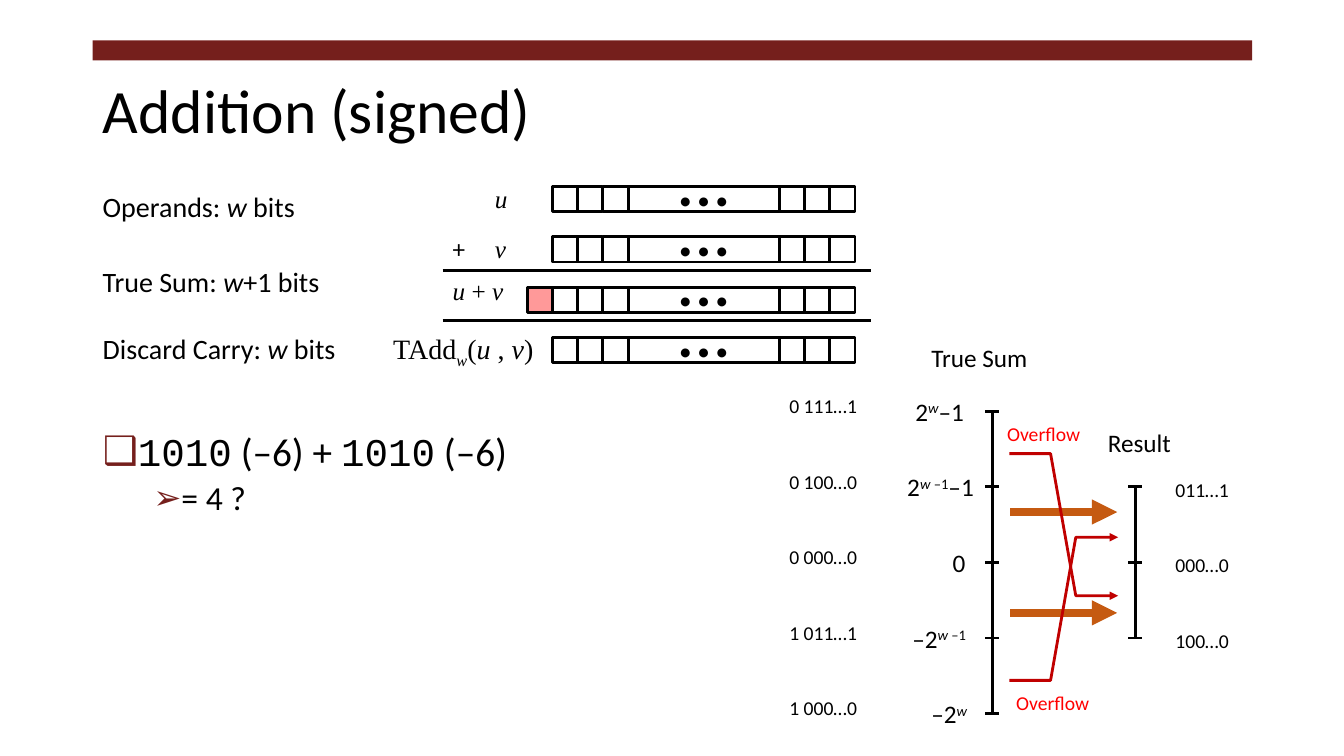
from lxml import etree
from pptx import Presentation
from pptx.dml.color import RGBColor
from pptx.enum.shapes import MSO_CONNECTOR, MSO_SHAPE
from pptx.enum.text import MSO_ANCHOR, MSO_AUTO_SIZE, PP_ALIGN
from pptx.oxml.ns import qn
from pptx.util import Inches, Pt

RECTANGLE = MSO_SHAPE.RECTANGLE
STRAIGHT = MSO_CONNECTOR.STRAIGHT
MIDDLE = MSO_ANCHOR.MIDDLE
NO_FIT, GROW = MSO_AUTO_SIZE.NONE, MSO_AUTO_SIZE.SHAPE_TO_FIT_TEXT
LEFT, CENTER, RIGHT = PP_ALIGN.LEFT, PP_ALIGN.CENTER, PP_ALIGN.RIGHT

SANS, SERIF, MONO = "Calibri", "Times New Roman", "Courier New"
BLACK, WHITE, MAROON, PINK = "000000", "FFFFFF", "751F1C", "FF9999"
RED, CRIMSON, ORANGE = "FF0000", "C00000", "C55A11"
BIT = 0.25
STEP = 0.75
TOP_TICK = 4.08
BASELINES = {"^": "30000", "_": "-25000"}


def rgb(color):
    return RGBColor.from_string(color)


def place(shape, left, top, width, height):
    shape.left, shape.top = Inches(left), Inches(top)
    shape.width, shape.height = Inches(width), Inches(height)


def add_runs(paragraph, parts, size, font=SANS, color=BLACK):
    """Write (text, style) parts; style letters: i italic, m mono, ^ raised, _ lowered."""
    for text, style in parts:
        run = paragraph.add_run()
        run.text = text
        run.font.name = MONO if "m" in style else font
        run.font.size = Pt(size)
        run.font.italic = "i" in style
        run.font.color.rgb = rgb(color)
        for mark, baseline in BASELINES.items():
            if mark in style:
                run.font._element.set("baseline", baseline)


def add_label(shapes, box, parts, size=18, font=SANS, color=BLACK, align=LEFT, wrap=False):
    label = shapes.add_textbox(*map(Inches, box))
    frame = label.text_frame
    frame.word_wrap = wrap
    frame.auto_size = GROW
    paragraph = frame.paragraphs[0]
    paragraph.alignment = align
    if isinstance(parts, str):
        parts = [(parts, "")]
    add_runs(paragraph, parts, size, font, color)


def add_box(shapes, left, top, width, height, fill=WHITE, outlined=True):
    box = shapes.add_shape(RECTANGLE, *map(Inches, (left, top, width, height)))
    box.shadow.inherit = False
    box.fill.solid()
    box.fill.fore_color.rgb = rgb(fill)
    if outlined:
        box.line.color.rgb = rgb(BLACK)
        box.line.width = Pt(2)
    else:
        box.line.fill.background()
    return box


def style_line(line_shape, color, width, arrow):
    line_shape.line.color.rgb = rgb(color)
    line_shape.line.width = Pt(width)
    properties = line_shape._element.spPr
    if arrow:
        etree.SubElement(properties.find(qn("a:ln")), qn("a:tailEnd"), type="triangle")


def add_line(shapes, x1, y1, x2, y2, color=BLACK, width=2, arrow=False):
    line = shapes.add_connector(STRAIGHT, *map(Inches, (x1, y1, x2, y2)))
    style_line(line, color, width, arrow)
    etree.SubElement(line._element.spPr, qn("a:effectLst"))


def add_overflow_path(shapes, start_y, end_y):
    points = [(10.01, start_y), (10.42, start_y), (10.67, end_y), (11.09, end_y)]
    corners = [(Inches(x), Inches(y)) for x, y in points]
    builder = shapes.build_freeform(*corners[0])
    builder.add_line_segments(corners[1:], close=False)
    route = builder.convert_to_shape()
    route.shadow.inherit = False
    route.fill.background()
    style_line(route, CRIMSON, 2, arrow=True)


def add_bit_row(slide, top, carry=False):
    row = slide.shapes.add_group_shape().shapes
    for left in (5.48, 7.73):
        for index in range(3):
            add_box(row, left + index * BIT, top, BIT, BIT)
    middle = add_box(row, 6.23, top, 1.5, BIT)
    frame = middle.text_frame
    frame.word_wrap = False
    frame.vertical_anchor = MIDDLE
    frame.paragraphs[0].alignment = CENTER
    add_runs(frame.paragraphs[0], [("• • •", "")], 18)
    if carry:
        add_box(row, 5.23, top, BIT, BIT, PINK)


def add_axis(shapes, x, top, ticks):
    """Draw a vertical scale in two halves, with evenly spaced ticks."""
    half = STEP * (ticks - 1) / 2
    for start in (top, top + half):
        add_line(shapes, x, start, x, start + half)
    for index in range(ticks):
        y = top + index * STEP
        add_line(shapes, x - 0.07, y, x + 0.07, y)


def add_bullet(paragraph, symbol, margin, parts, size, space_before):
    properties = paragraph._p.get_or_add_pPr()
    properties.set("marL", str(Inches(margin)))
    properties.set("indent", str(Inches(-0.25)))
    bullet_color = etree.SubElement(properties, qn("a:buClr"))
    etree.SubElement(bullet_color, qn("a:srgbClr"), val=MAROON)
    etree.SubElement(properties, qn("a:buChar"), char=symbol)
    paragraph.line_spacing = 0.9
    paragraph.space_before = Pt(space_before)
    add_runs(paragraph, parts, size)


def fill_placeholders(slide):
    title = slide.shapes.title
    place(title, 0.92, 0.4, 11.5, 1.45)
    title.text_frame.auto_size = NO_FIT
    title.text_frame.vertical_anchor = MIDDLE
    heading = title.text_frame.paragraphs[0]
    heading.alignment = LEFT
    heading.line_spacing = 0.9
    add_runs(heading, [("Addition (signed)", "")], 44)

    body = slide.placeholders[1]
    place(body, 0.92, 4.24, 5.31, 3.04)
    frame = body.text_frame
    frame.auto_size = NO_FIT
    example = [("1010", "m"), (" (–6) + ", ""), ("1010", "m"), (" (–6)", "")]
    add_bullet(frame.paragraphs[0], "❑", 0.25, example, 28, 0)
    answer = frame.add_paragraph()
    answer.level = 1
    add_bullet(answer, "➢", 0.75, [("= 4 ?", "")], 24, 5)


def add_bitwise_sum(slide):
    shapes = slide.shapes
    for index in range(4):
        add_bit_row(slide, 1.85 + index * 0.5, carry=index == 2)
    for y in (2.68, 3.18):
        add_line(shapes, 4.39, y, 8.64, y)

    add_label(shapes, (4.81, 1.77, 0.33, 0.4), [("u", "i")], font=SERIF)
    add_label(shapes, (4.81, 2.27, 0.31, 0.4), [("v", "i")], font=SERIF)
    add_label(shapes, (4.39, 2.27, 0.35, 0.4), "+")
    add_label(shapes, (4.39, 2.68, 0.7, 0.4), [("u ", "i"), ("+ ", ""), ("v", "i")],
              font=SERIF, align=RIGHT)
    signed_add = [("TAdd", ""), ("w", "i_"), ("(", ""), ("u", "i"), (" , ", ""),
                  ("v", "i"), (")", "")]
    add_label(shapes, (3.75, 3.24, 1.64, 0.44), signed_add, 20, SERIF, align=RIGHT)

    for top, width, step, bits, wrap in (
        (1.83, 2.13, "Operands: ", " bits", False),
        (2.58, 2.37, "True Sum: ", "+1 bits", False),
        (3.24, 3.25, "Discard Carry: ", " bits", True),
    ):
        add_label(shapes, (0.92, top, width, 0.44), [(step, ""), ("w", "i"), (bits, "")],
                  20, wrap=wrap)


def add_range_diagram(slide):
    shapes = slide.shapes.add_group_shape().shapes
    add_axis(shapes, 9.84, TOP_TICK, 5)
    add_axis(shapes, 11.26, TOP_TICK + STEP, 3)
    for y, start_y, end_y in ((5.08, 4.5, 5.91), (6.08, 6.75, 5.33)):
        add_line(shapes, 10.02, y, 11.08, y, ORANGE, 6, arrow=True)
        add_overflow_path(shapes, start_y, end_y)

    half_power = [("w ", "i^"), ("–1", "^")]
    for box, value, align, wrap in (
        ((8.98, 3.88, 0.7, 0.4), [("2", ""), ("w", "i^"), ("–1", "")], LEFT, False),
        ((8.9, 4.63, 1.03, 0.4), [("2", ""), *half_power, ("–1", "")], LEFT, True),
        ((9.35, 5.38, 0.33, 0.4), "0", LEFT, False),
        ((8.9, 6.13, 0.78, 0.4), [("–2", ""), *half_power], RIGHT, False),
        ((9.11, 6.88, 0.58, 0.4), [("–2", ""), ("w", "i^")], RIGHT, False),
    ):
        add_label(shapes, box, value, align=align, wrap=wrap)

    sum_codes = ("0 111…1", "0 100…0", "0 000…0", "1 011…1", "1 000…0")
    result_codes = ("011…1", "000…0", "100…0")
    for left, top, width, codes in ((7.73, 3.86, 0.88, sum_codes),
                                    (11.56, 4.69, 0.73, result_codes)):
        for index, code in enumerate(codes):
            add_label(shapes, (left, top + index * STEP, width, 0.33), code, 14)

    add_label(shapes, (9.14, 3.35, 1.51, 0.5), "True Sum")
    add_label(shapes, (10.89, 4.19, 0.83, 0.4), "Result")
    for left, top in ((9.89, 4.14), (9.98, 6.81)):
        add_label(shapes, (left, top, 0.93, 0.34), "Overflow", 14, color=RED)


def main():
    deck = Presentation()
    deck.slide_width, deck.slide_height = Inches(13.33), Inches(7.5)
    slide = deck.slides.add_slide(deck.slide_layouts[1])
    add_box(slide.shapes, 0.92, 0.4, 11.5, 0.2, MAROON, outlined=False)
    fill_placeholders(slide)
    add_bitwise_sum(slide)
    add_range_diagram(slide)
    deck.save("out.pptx")


if __name__ == "__main__":
    main()
